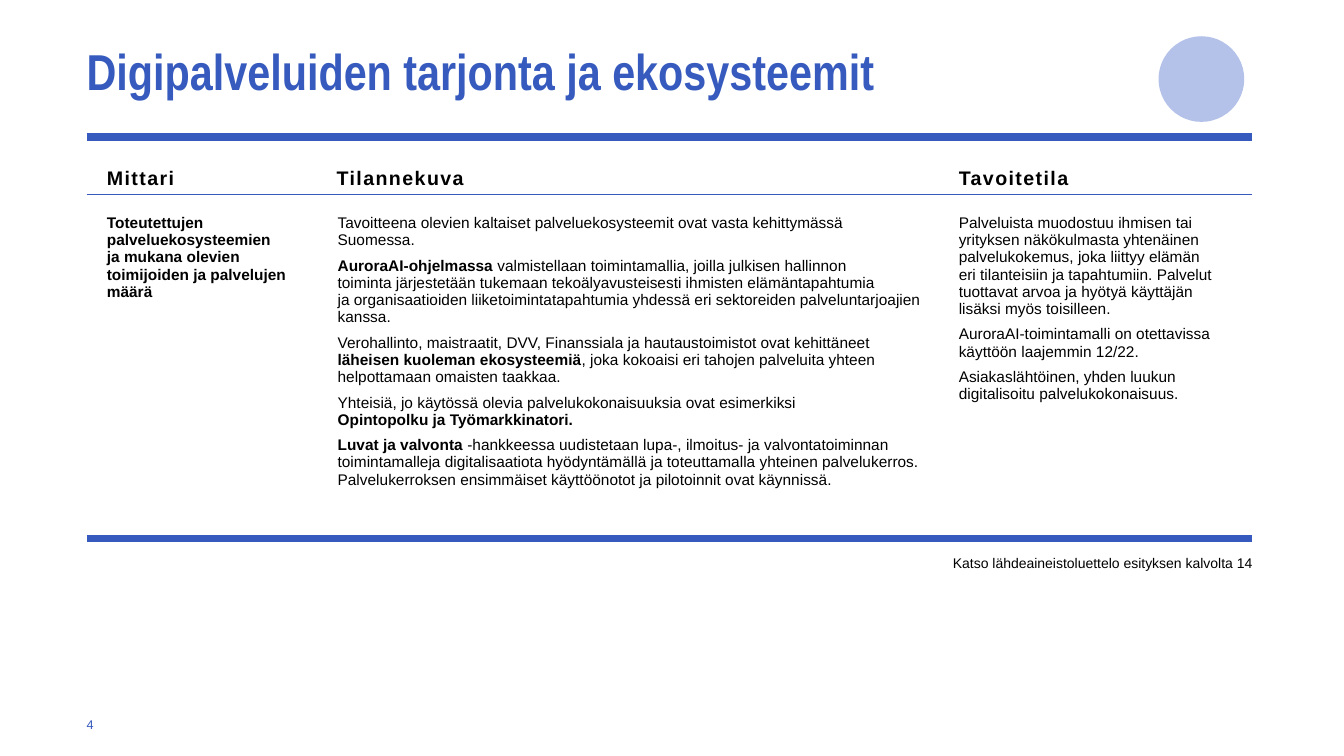
from lxml.etree import SubElement
from pptx import Presentation
from pptx.dml.color import RGBColor as Color
from pptx.enum.shapes import MSO_SHAPE as Shape
from pptx.enum.text import MSO_ANCHOR as Anchor, PP_ALIGN as Align
from pptx.oxml.ns import qn
from pptx.util import Inches, Pt

COLORS = {"blue": "365ABD", "pale": "ACBCE7", "text": "000000"}

deck = Presentation()
deck.slide_width, deck.slide_height = Inches(13.33), Inches(7.5)
page = deck.slides.add_slide(deck.slide_layouts[6])


def area(left, top, width, height):
    """Turn percentages of the slide's width and height into lengths."""
    across, down = deck.slide_width / 100, deck.slide_height / 100
    return [int(share * unit) for share, unit in
            zip((left, top, width, height), (across, down, across, down))]


def write(para, text, size, color="text", bold=False, font="Arial"):
    """Fill a paragraph; parts between asterisks are bold, \\n breaks the line."""
    for part_index, part in enumerate(text.split("*")):
        for line_index, line in enumerate(part.split("\n")):
            if line_index:
                para.add_line_break()
            if not line:
                continue
            span = para.add_run()
            span.text = line
            span.font.name, span.font.size = font, Pt(size)
            span.font.bold = bold or part_index % 2 == 1
            span.font.color.rgb = Color.from_string(COLORS[color])
    for line_break in para._p.findall(qn("a:br")):
        SubElement(line_break, qn("a:rPr"), sz=str(size * 100))


# Title, source note and page number
MARGIN, CONTENT = 6.45, 86.72
labels = [
    ("Digipalveluiden tarjonta ja ekosysteemit", (MARGIN, 0, CONTENT, 19.33),
     36, "blue", True, "Arial Narrow", Align.LEFT),
    ("Katso lähdeaineistoluettelo esityksen kalvolta 14", (69.24, 72, 23.93, 4.9),
     10, "text", False, "Arial", Align.RIGHT),
    ("4", (MARGIN, 94.13, 3, 3.33), 9, "blue", False, "Arial", Align.LEFT),
]
for text, place, size, color, bold, font, align in labels:
    box = page.shapes.add_textbox(*area(*place))
    frame = box.text_frame
    frame.word_wrap = True
    frame.vertical_anchor = Anchor.MIDDLE
    frame.margin_left = frame.margin_right = frame.margin_top = frame.margin_bottom = 0
    para = frame.paragraphs[0]
    para.alignment = align
    write(para, text, size, color, bold, font)
    if font == "Arial Narrow":
        para.line_spacing = 0.95

# Table of the measure, its status and its target
headings = ["Mittari", "Tilannekuva", "Tavoitetila"]
details = [
    ["*Toteutettujen palveluekosysteemien\n"
     "ja mukana olevien toimijoiden ja palvelujen määrä*"],
    ["Tavoitteena olevien kaltaiset palveluekosysteemit ovat vasta kehittymässä Suomessa.",
     "*AuroraAI-ohjelmassa* valmistellaan toimintamallia, joilla julkisen hallinnon\n"
     "toiminta järjestetään tukemaan tekoälyavusteisesti ihmisten elämäntapahtumia\n"
     "ja organisaatioiden liiketoimintatapahtumia yhdessä eri sektoreiden "
     "palveluntarjoajien kanssa.",
     "Verohallinto, maistraatit, DVV, Finanssiala ja hautaustoimistot ovat kehittäneet "
     "*läheisen kuoleman ekosysteemiä*, joka kokoaisi eri tahojen palveluita yhteen "
     "helpottamaan omaisten taakkaa.",
     "Yhteisiä, jo käytössä olevia palvelukokonaisuuksia ovat esimerkiksi\n"
     "*Opintopolku ja Työmarkkinatori.*",
     "*Luvat ja valvonta* -hankkeessa uudistetaan lupa-, ilmoitus- ja valvontatoiminnan "
     "toimintamalleja digitalisaatiota hyödyntämällä ja toteuttamalla yhteinen "
     "palvelukerros. Palvelukerroksen ensimmäiset käyttöönotot ja pilotoinnit ovat "
     "käynnissä."],
    ["Palveluista muodostuu ihmisen tai\nyrityksen näkökulmasta yhtenäinen\n"
     "palvelukokemus, joka liittyy elämän\neri tilanteisiin ja tapahtumiin. Palvelut "
     "tuottavat arvoa ja hyötyä käyttäjän\nlisäksi myös toisilleen.",
     "AuroraAI-toimintamalli on otettavissa\nkäyttöön laajemmin 12/22.",
     "Asiakaslähtöinen, yhden luukun\ndigitalisoitu palvelukokonaisuus."],
]
column_shares, row_shares = (17.1, 45.99, 23.63), (7.6, 45.47)
insets = (0.2, 0.2, 0.24)
edge_widths = (6, 1, 6)

table = page.shapes.add_table(
    2, 3, *area(MARGIN, 18.13, CONTENT, sum(row_shares))).table
table.first_row = table.horz_banding = False
for column, share in zip(table.columns, column_shares):
    column.width = area(0, 0, share, 0)[2]
for row, share in zip(table.rows, row_shares):
    row.height = area(0, 0, 0, share)[3]

for row_index in range(2):
    for column_index, inset in enumerate(insets):
        cell = table.cell(row_index, column_index)
        cell.margin_left, cell.margin_right = Inches(inset), Inches(0.1)
        cell.margin_top = Inches(0.2 if row_index else 0.05)
        cell.margin_bottom = Inches(0.05)
        cell.vertical_anchor = Anchor.TOP if row_index else Anchor.BOTTOM
        properties = cell._tc.get_or_add_tcPr()
        for side in ("a:lnL", "a:lnR"):
            SubElement(SubElement(properties, qn(side), w="0"), qn("a:noFill"))
        for side, width in zip(("a:lnT", "a:lnB"), edge_widths[row_index:]):
            edge = SubElement(properties, qn(side), w=str(Pt(width)))
            fill = SubElement(edge, qn("a:solidFill"))
            SubElement(fill, qn("a:srgbClr"), val=COLORS["blue"])
        cell.fill.background()

        frame = cell.text_frame
        if row_index == 0:
            para = frame.paragraphs[0]
            write(para, headings[column_index], 14, bold=True)
            para.runs[0].font._element.set("spc", "100")
            continue
        for index, text in enumerate(details[column_index]):
            para = frame.add_paragraph() if index else frame.paragraphs[0]
            para.space_after = Pt(6)
            if column_index == 1:
                para._p.get_or_add_pPr().set("marL", str(Inches(0.01)))
            write(para, text, 11)

# Circle in the upper right corner
circle = page.shapes.add_shape(Shape.OVAL, *area(86.2, 4.8, 6.38, 11.33))
circle.shadow.inherit = False
circle.line.fill.background()
circle.fill.solid()
circle.fill.fore_color.rgb = Color.from_string(COLORS["pale"])
SubElement(circle._element.spPr.find(".//" + qn("a:srgbClr")), qn("a:alpha"), val="90000")

deck.save("out.pptx")
